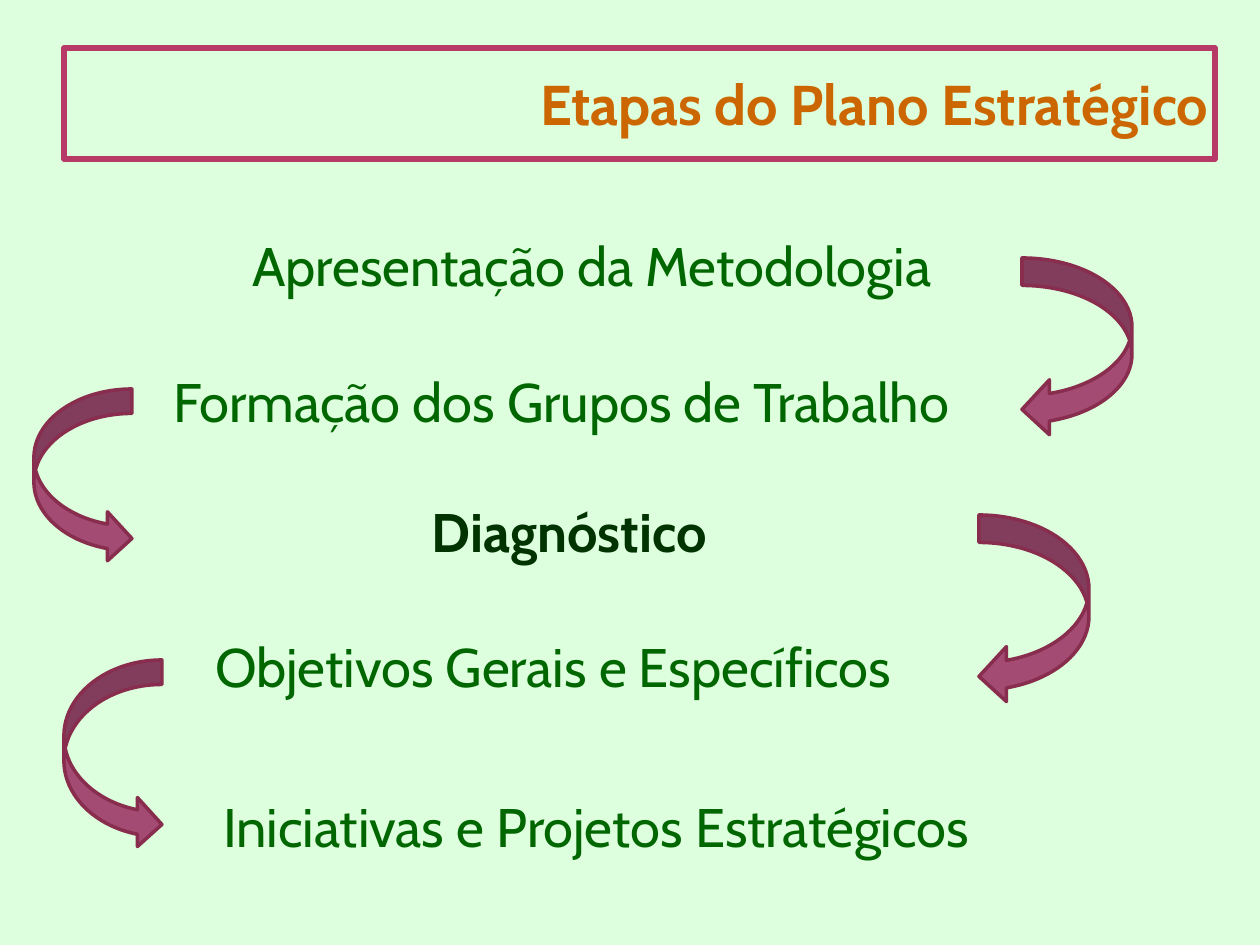
import pptx
import pptx.util
import pptx.dml.color
import pptx.enum.shapes
import pptx.enum.text

ALIGN = pptx.enum.text.PP_ALIGN
STEPS = [
    ("Apresentação da Metodologia", (116, 208, 951, 122), False),
    ("Formação dos Grupos de Trabalho", (130, 358, 862, 94), False),
    ("Diagnóstico", (249, 499, 641, 72), True),
    ("Objetivos Gerais e Específicos", (134, 614, 838, 113), False),
    ("Iniciativas e Projetos Estratégicos", (34, 767, 1124, 126), False),
]
ARROWS = [
    ((1022, 258, 110, 179), False),
    ((34, 389, 98, 174), True),
    ((979, 515, 110, 189), False),
    ((64, 660, 98, 189), True),
]


def px(n):
    return round(n * 914400 / 126)


def color(fmt, code):
    fmt.rgb = pptx.dml.color.RGBColor.from_string(code)


def fill(part, code):
    part.fill.solid()
    color(part.fill.fore_color, code)


def edge(shape, code, width):
    color(shape.line.color, code)
    shape.line.width = pptx.util.Pt(width)


def write(shape, text, align, size, code, bold, inset):
    frame = shape.text_frame
    form = {
        "word_wrap": True,
        "auto_size": pptx.enum.text.MSO_AUTO_SIZE.NONE,
        "vertical_anchor": pptx.enum.text.MSO_ANCHOR.MIDDLE,
        "margin_left": px(inset[0]), "margin_right": px(inset[0]),
        "margin_top": px(inset[1]), "margin_bottom": px(inset[1]),
    }
    for key, value in form.items():
        setattr(frame, key, value)
    line = frame.paragraphs[0]
    line.alignment = align
    run = line.add_run()
    run.text = text
    look = {"name": "Cabin", "size": pptx.util.Pt(size), "bold": bold}
    for key, value in look.items():
        setattr(run.font, key, value)
    color(run.font.color, code)
    return line


def add_title(slide, box):
    title = slide.shapes.title
    for key, value in zip(("left", "top", "width", "height"), box):
        setattr(title, key, px(value))
    edge(title, "B73965", 3)
    write(title, "Etapas do Plano Estratégico", ALIGN.RIGHT, 32,
          "CC6600", True, (6, 0))


def add_arrow(slide, box, flip):
    kind = pptx.enum.shapes.MSO_SHAPE.CURVED_LEFT_ARROW
    arrow = slide.shapes.add_shape(kind, *map(px, box))
    arrow.shadow.inherit = False
    fill(arrow, "A34B73")
    edge(arrow, "882D4D", 2)
    if flip:
        arrow._element.spPr.xfrm.set("flipH", "1")


def add_step(slide, text, box, bold):
    label = slide.shapes.add_textbox(*map(px, box))
    code = "003300" if bold else "006600"
    line = write(label, text, ALIGN.CENTER, 31, code, bold, (14, 14))
    line.line_spacing = 0.9


def main():
    deck = pptx.Presentation()
    deck.slide_width, deck.slide_height = px(1260), px(945)
    slide = deck.slides.add_slide(deck.slide_layouts[5])
    fill(slide.background, "DDFFDD")
    add_title(slide, (64, 48, 1151, 111))
    for box, flip in ARROWS:
        add_arrow(slide, box, flip)
    for text, box, bold in STEPS:
        add_step(slide, text, box, bold)
    deck.save("out.pptx")


if __name__ == "__main__":
    main()
